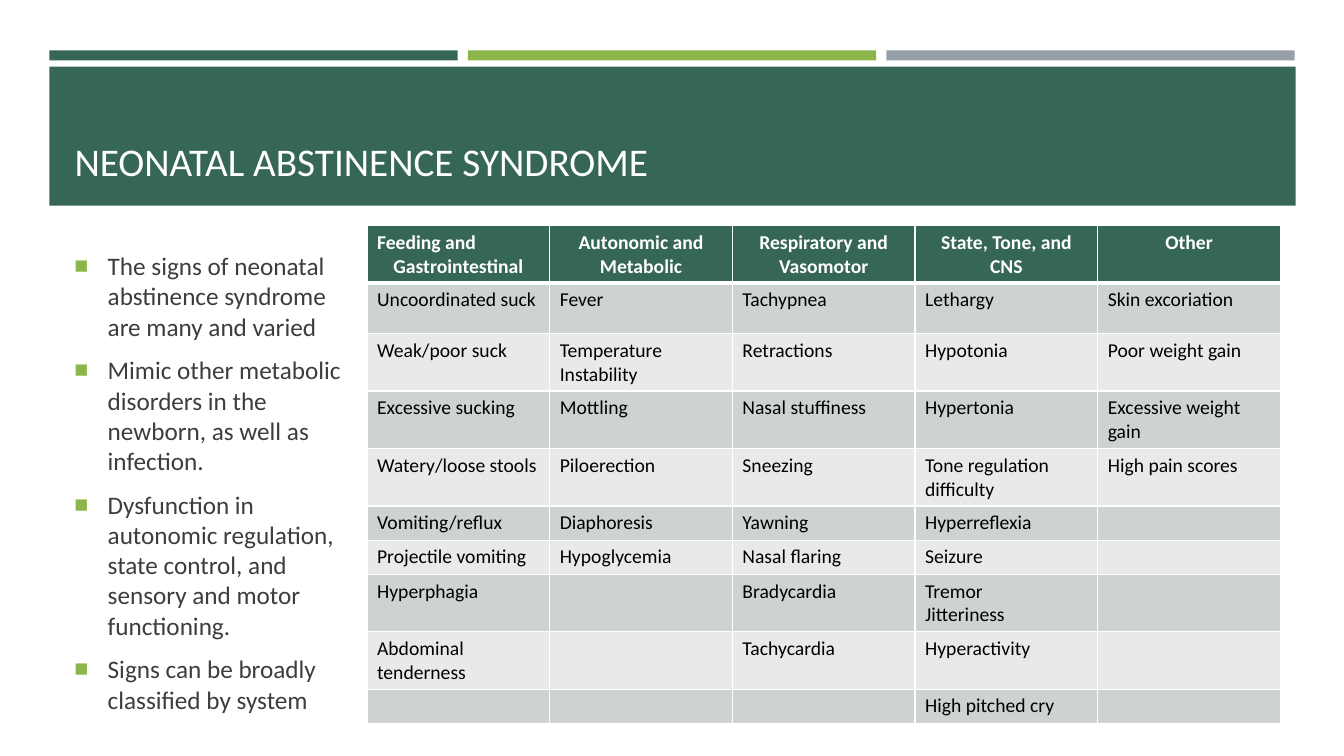
from lxml import etree
from pptx import Presentation
from pptx.dml.color import RGBColor
from pptx.enum.shapes import MSO_SHAPE
from pptx.enum.text import MSO_ANCHOR, MSO_AUTO_SIZE, PP_ALIGN
from pptx.oxml.ns import qn
from pptx.util import Pt

PX = 9144
FONT = "Calibri"
RECT = MSO_SHAPE.RECTANGLE
BOTTOM, MIDDLE = MSO_ANCHOR.BOTTOM, MSO_ANCHOR.MIDDLE
LEFT, CENTER = PP_ALIGN.LEFT, PP_ALIGN.CENTER
NO_FIT = MSO_AUTO_SIZE.NONE

GREEN = RGBColor(0x36, 0x66, 0x58)
LIME = RGBColor(0x8C, 0xB6, 0x4A)
GRAY = RGBColor(0x96, 0x9F, 0xA7)
WHITE = RGBColor(0xFF, 0xFF, 0xFF)
BLACK = RGBColor(0, 0, 0)
INK = RGBColor(0x3D, 0x3D, 0x3D)
BANDS = (RGBColor(0xE8, 0xEA, 0xEA), RGBColor(0xCE, 0xD3, 0xD1))

POINTS = [
    "The signs of neonatal abstinence syndrome are many and varied",
    "Mimic other metabolic disorders in the newborn, as well as infection.",
    "Dysfunction in autonomic regulation, state control, and sensory and motor functioning.",
    "Signs can be broadly classified by system",
]
SIGNS = [
    ["Feeding and\nGastrointestinal", "Autonomic and Metabolic", "Respiratory and Vasomotor",
     "State, Tone, and CNS", "Other"],
    ["Uncoordinated suck", "Fever", "Tachypnea", "Lethargy", "Skin excoriation"],
    ["Weak/poor suck", "Temperature Instability", "Retractions", "Hypotonia", "Poor weight gain"],
    ["Excessive sucking", "Mottling", "Nasal stuffiness", "Hypertonia", "Excessive weight gain"],
    ["Watery/loose stools", "Piloerection", "Sneezing", "Tone regulation difficulty",
     "High pain scores"],
    ["Vomiting/reflux", "Diaphoresis", "Yawning", "Hyperreflexia", ""],
    ["Projectile vomiting", "Hypoglycemia", "Nasal flaring", "Seizure", ""],
    ["Hyperphagia", "", "Bradycardia", "Tremor\nJitteriness", ""],
    ["Abdominal tenderness", "", "Tachycardia", "Hyperactivity", ""],
    ["", "", "", "High pitched cry", ""],
]
ROW_HEIGHTS = [57, 50, 57, 57, 57, 34, 34, 57, 57, 34]


class Deck:
    """Draws styled elements on the current slide, with lengths in px."""

    def __init__(self, width, height):
        self.prs = Presentation()
        self.prs.slide_width, self.prs.slide_height = width * PX, height * PX
        self.s = self.prs.slides.add_slide(self.prs.slide_layouts[5])

    def style(self, p, size, color, bold=False):
        for r in p.runs:
            r.font.name, r.font.size, r.font.bold = FONT, Pt(size), bold
            r.font.color.rgb = color

    def bar(self, x, y, w, h, color):
        sp = self.s.shapes.add_shape(RECT, x * PX, y * PX, w * PX, h * PX)
        sp.shadow.inherit = False
        sp.fill.solid()
        sp.fill.fore_color.rgb = color
        sp.line.fill.background()

    def title(self, x, y, w, h, text):
        sp = self.s.shapes.title
        sp.left, sp.top, sp.width, sp.height = x * PX, y * PX, w * PX, h * PX
        self.s.shapes._spTree.append(sp._element)
        tf = sp.text_frame
        tf.text = text
        tf.vertical_anchor, tf.auto_size, tf.word_wrap = BOTTOM, NO_FIT, True
        tf.paragraphs[0].alignment = LEFT
        self.style(tf.paragraphs[0], 28, WHITE)

    def bullet(self, p):
        pPr = p._p.get_or_add_pPr()
        pPr.set("marL", str(33 * PX))
        pPr.set("indent", str(-33 * PX))
        color = etree.SubElement(pPr, qn("a:buClr"))
        etree.SubElement(color, qn("a:srgbClr"), val=str(LIME))
        etree.SubElement(pPr, qn("a:buSzPct"), val="92000")
        etree.SubElement(pPr, qn("a:buFont"), typeface="Arial")
        etree.SubElement(pPr, qn("a:buChar"), char="■")

    def bullets(self, x, y, w, h, points):
        tf = self.s.shapes.add_textbox(x * PX, y * PX, w * PX, h * PX).text_frame
        tf.word_wrap, tf.vertical_anchor = True, MIDDLE
        tf.text = "\n".join(points)
        for p in tf.paragraphs:
            p.space_before, p.space_after = Pt(3.6), Pt(6)
            self.bullet(p)
            self.style(p, 18, INK)

    def border(self, cell, side, width):
        ln = etree.SubElement(cell._tc.get_or_add_tcPr(), qn("a:ln" + side), w=str(Pt(width)))
        fill = etree.SubElement(ln, qn("a:solidFill"))
        etree.SubElement(fill, qn("a:srgbClr"), val=str(WHITE))

    def cell(self, cell, text, row):
        header = row == 0
        for side in "LRTB":
            thick = (row, side) in ((0, "B"), (1, "T"))
            self.border(cell, side, 3 if thick else 1)
        cell.fill.solid()
        cell.fill.fore_color.rgb = GREEN if header else BANDS[row % 2]
        cell.text_frame.text = text
        for p in cell.text_frame.paragraphs:
            p.alignment = CENTER if header and p.text != "Feeding and" else LEFT
            self.style(p, 14, WHITE if header else BLACK, header)
            if not text:
                etree.SubElement(p._p, qn("a:endParaRPr"), sz="1400")

    def table(self, x, y, w, rows, heights):
        cols = len(rows[0])
        frame = self.s.shapes.add_table(len(rows), cols, x * PX, y * PX, w * PX, sum(heights) * PX)
        table = frame.table
        for col in table.columns:
            col.width = w * PX // cols
        for i, (texts, height) in enumerate(zip(rows, heights)):
            table.rows[i].height = height * PX
            for j, text in enumerate(texts):
                self.cell(table.cell(i, j), text, i)


def main():
    deck = Deck(1333, 750)
    for i, color in enumerate((GREEN, LIME, GRAY)):
        deck.bar(49 + 415 * i, 50, 405, 10, color)
    deck.bar(49, 66, 1236, 138, GREEN)
    deck.title(64, 80, 1206, 108, "NEONATAL ABSTINENCE SYNDROME")
    deck.bullets(64, 244, 300, 469, POINTS)
    deck.table(364, 224, 906, SIGNS, ROW_HEIGHTS)
    deck.prs.save("out.pptx")


if __name__ == "__main__":
    main()
